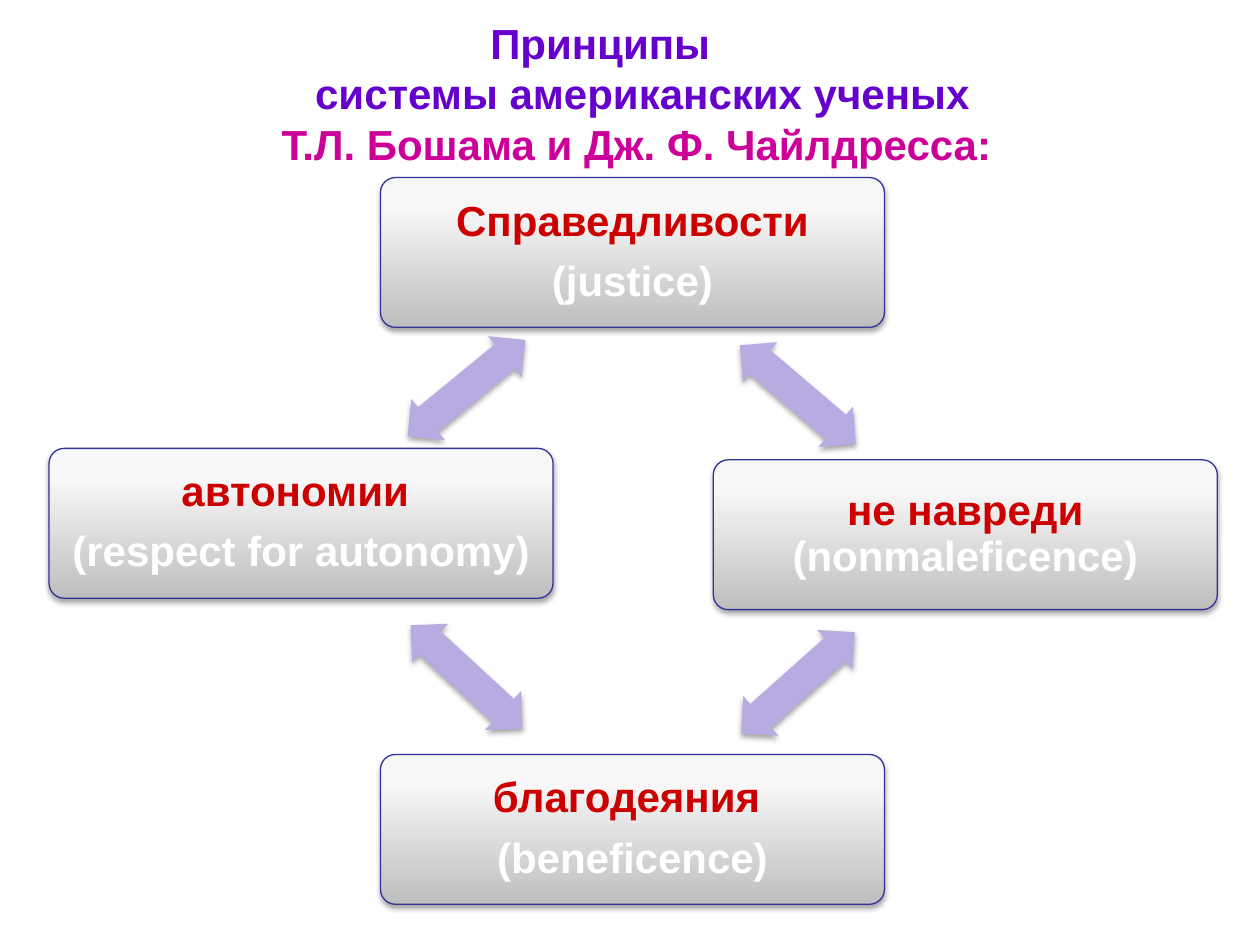
from dataclasses import dataclass

import lxml.etree
import pptx
import pptx.dml.color
import pptx.enum.shapes
import pptx.enum.text
import pptx.oxml
import pptx.oxml.ns
import pptx.util
from pptx.util import Cm

SHAPES = pptx.enum.shapes.MSO_SHAPE
CENTER = pptx.enum.text.PP_ALIGN.CENTER
MIDDLE = pptx.enum.text.MSO_ANCHOR.MIDDLE


@dataclass(frozen=True)
class Theme:
    font: str = "Arial"
    size: float = 24
    heading: str = "6600CC"
    authors: str = "CC0099"
    principle: str = "CC0000"
    english: str = "FFFFFF"
    border: str = "333399"
    arrow: str = "B8ABE2"
    card_stops: tuple = ((0, "BEBEBE"), (80, "F7F7F7"), (100, "F8F8F8"))


THEME = Theme()
CARD_SIZE = (Cm(10.16), Cm(3.02))
ARROW_SIZE = (Cm(3.07), Cm(1.07))

# left and top in cm, then the paragraphs, each a list of (text, colour)
CARDS = [
    (7.67, 3.58, [[("Справедливости", THEME.principle)],
                  [("(justice)", THEME.english)]]),
    (14.38, 9.27, [[("не навреди ", THEME.principle),
                    ("(nonmaleficence)", THEME.english)]]),
    (7.67, 15.21, [[("благодеяния ", THEME.principle)],
                   [("(beneficence)", THEME.english)]]),
    (0.99, 9.04, [[("автономии ", THEME.principle)],
                  [("(respect for autonomy)", THEME.english)]]),
]
# left and top in cm, then the rotation in degrees
ARROWS = [
    (14.55, 7.42, 40.4),
    (14.55, 13.23, 138.3),
    (7.87, 13.11, 222.7),
    (7.87, 7.29, 320.7),
]


def rgb(value):
    return pptx.dml.color.RGBColor.from_string(value)


def add_text(paragraph, text, *, color, size=THEME.size, font=THEME.font, bold=True):
    """Append formatted text; each newline becomes a line break."""
    for number, line in enumerate(text.split("\n")):
        if number:
            paragraph.add_line_break()
        if not line:
            continue
        run = paragraph.add_run()
        run.text = line
        run.font.name = font
        run.font.size = pptx.util.Pt(size)
        run.font.bold = bold
        run.font.color.rgb = rgb(color)


def add_soft_shadow(shape):
    shape.shadow.inherit = False
    effects = shape._element.spPr.find(pptx.oxml.ns.qn("a:effectLst"))
    effects.append(pptx.oxml.parse_xml(
        f'<a:outerShdw {pptx.oxml.ns.nsdecls("a")} blurRad="40000" dist="23000" '
        'dir="5400000" rotWithShape="0"><a:srgbClr val="000000">'
        '<a:alpha val="35000"/></a:srgbClr></a:outerShdw>'))


def fill_gradient(shape, stops):
    """Fill from the bottom edge upwards with any number of stops."""
    shape.fill.gradient()
    shape.fill.gradient_angle = 90
    stop_list = shape._element.spPr.find(".//" + pptx.oxml.ns.qn("a:gsLst"))
    for stop in list(stop_list):
        stop_list.remove(stop)
    for position, color in stops:
        stop = lxml.etree.SubElement(
            stop_list, pptx.oxml.ns.qn("a:gs"), pos=str(position * 1000))
        lxml.etree.SubElement(stop, pptx.oxml.ns.qn("a:srgbClr"), val=color)


def add_title(slide):
    title = slide.shapes.title
    title.left, title.top = Cm(2.18), Cm(0.58)
    title.width, title.height = Cm(19.84), Cm(2.59)
    frame = title.text_frame
    frame.word_wrap = True
    frame.auto_size = pptx.enum.text.MSO_AUTO_SIZE.NONE
    frame.vertical_anchor = MIDDLE
    heading = frame.paragraphs[0]
    heading.alignment = CENTER
    hanging = Cm(1.7)
    properties = heading._p.get_or_add_pPr()
    properties.set("marL", str(hanging))
    properties.set("indent", str(-hanging))
    add_text(heading, "Принципы\n системы американских ученых \n", color=THEME.heading)
    add_text(heading, "Т.Л. Бошама и Дж. Ф. Чайлдресса: ", color=THEME.authors)


def add_card(slide, left, top, paragraphs):
    card = slide.shapes.add_shape(
        SHAPES.ROUNDED_RECTANGLE, Cm(left), Cm(top), *CARD_SIZE)
    card.adjustments[0] = 0.1
    fill_gradient(card, THEME.card_stops)
    card.line.color.rgb = rgb(THEME.border)
    card.line.width = pptx.util.Pt(0.75)
    add_soft_shadow(card)

    frame = card.text_frame
    frame.word_wrap = True
    frame.vertical_anchor = MIDDLE
    frame.margin_left = frame.margin_right = Cm(0.25)
    frame.margin_top = frame.margin_bottom = Cm(0.25)
    for number, parts in enumerate(paragraphs):
        paragraph = frame.add_paragraph() if number else frame.paragraphs[0]
        paragraph.alignment = CENTER
        paragraph.line_spacing = 0.9
        paragraph.space_after = pptx.util.Pt(8.4)
        for text, color in parts:
            add_text(paragraph, text, color=color)


def add_arrow(slide, left, top, rotation):
    arrow = slide.shapes.add_shape(
        SHAPES.LEFT_RIGHT_ARROW, Cm(left), Cm(top), *ARROW_SIZE)
    arrow.adjustments[0] = 0.6
    arrow.adjustments[1] = 0.5
    arrow.rotation = rotation
    arrow.fill.solid()
    arrow.fill.fore_color.rgb = rgb(THEME.arrow)
    arrow.line.fill.background()
    add_soft_shadow(arrow)


def main():
    presentation = pptx.Presentation()
    presentation.slide_width, presentation.slide_height = Cm(25.4), Cm(19.05)
    title_only = presentation.slide_layouts[5]
    slide = presentation.slides.add_slide(title_only)
    add_title(slide)
    for card in CARDS:
        add_card(slide, *card)
    for arrow in ARROWS:
        add_arrow(slide, *arrow)
    presentation.save("out.pptx")


if __name__ == "__main__":
    main()
